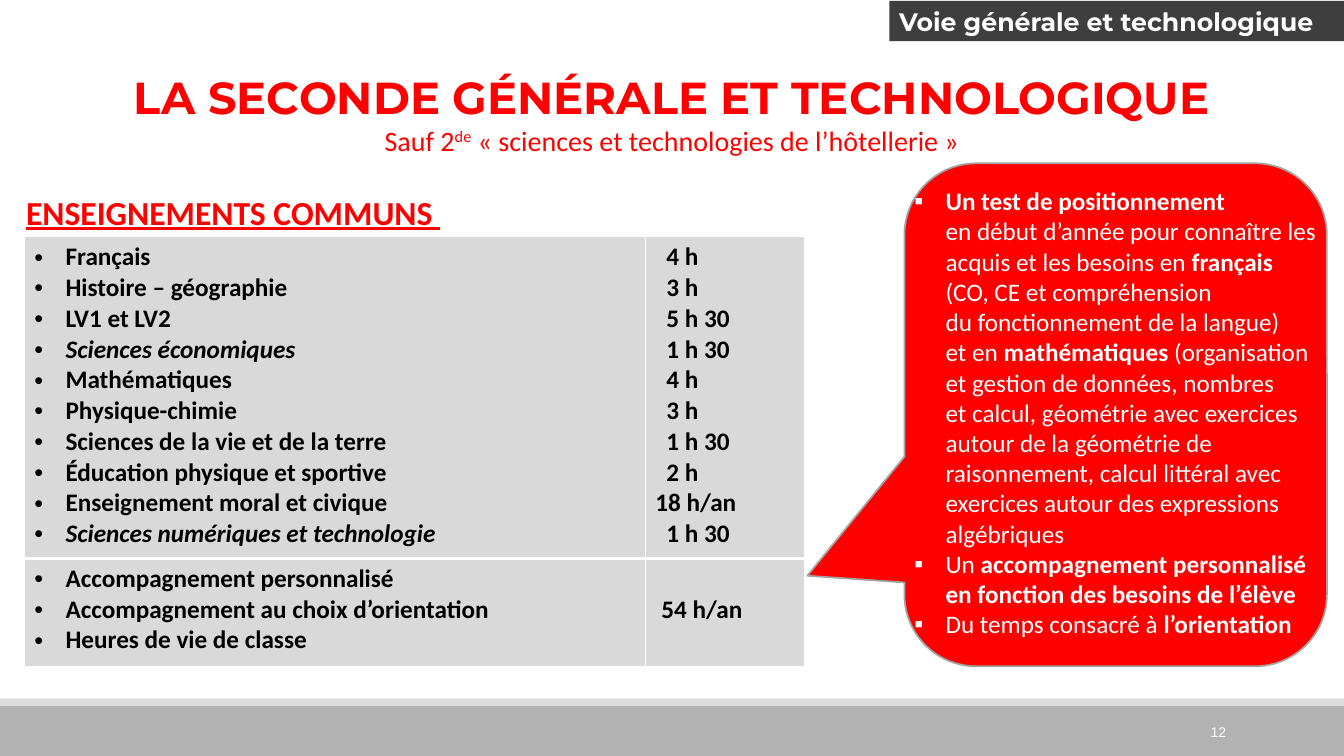
import pptx
import pptx.util
import pptx.dml.color
import pptx.enum.shapes
import pptx.enum.text
import pptx.oxml
import pptx.oxml.ns
from dataclasses import dataclass

Inches = pptx.util.Inches
Pt = pptx.util.Pt
RGB = pptx.dml.color.RGBColor.from_string
Shape = pptx.enum.shapes.MSO_SHAPE
Align = pptx.enum.text.PP_ALIGN
Anchor = pptx.enum.text.MSO_ANCHOR


@dataclass
class Theme:
    red: str = "FF0000"
    white: str = "FFFFFF"
    black: str = "000000"
    tag: str = "3E3E3E"
    cell: str = "D9D9D9"
    footer: str = "B2B2B2"
    stripe: str = "DDDDDD"
    outline: str = "A3A3A3"
    title: int = 32
    heading: int = 24
    subtitle: int = 20
    body: int = 18
    number: int = 10


theme = Theme()


def add_span(para, text, size=theme.body, color=theme.black, font="Calibri",
             bold=False, italic=False, underline=False, raised=False):
    for index, line in enumerate(text.split("\n")):
        if index:
            para.add_line_break()
        if not line:
            continue
        span = para.add_run()
        span.text = line
        span.font.size = Pt(size)
        span.font.color.rgb = RGB(color)
        span.font.name = font
        span.font.bold = bold
        span.font.italic = italic
        span.font.underline = underline
        if raised:
            span.font._element.set("baseline", "30000")


def set_indent(para, left, bullet=None):
    props = para._p.get_or_add_pPr()
    props.set("marL", str(Inches(left)))
    props.set("indent", str(-Inches(left) if bullet else 0))
    if bullet:
        for tag, name, value in (("buFont", "typeface", "Arial"), ("buChar", "char", bullet)):
            mark = pptx.oxml.parse_xml(f'<a:{tag} {pptx.oxml.ns.nsdecls("a")} {name}="{value}"/>')
            props.append(mark)


deck = pptx.Presentation()
deck.slide_width = Inches(13.33)
deck.slide_height = Inches(7.5)
page = deck.slides.add_slide(deck.slide_layouts[6])

# Footer bands, callout and section tag
blocks = {}
for name, kind, place, fill in (
    ("footer", Shape.RECTANGLE, (0, 7, 13.33, 0.5), theme.footer),
    ("stripe", Shape.RECTANGLE, (0, 6.93, 13.33, 0.07), theme.stripe),
    ("callout", Shape.ROUNDED_RECTANGULAR_CALLOUT, (8.97, 1.62, 4.19, 4.99), theme.red),
    ("tag", Shape.RECTANGLE, (8.82, 0.01, 4.51, 0.4), theme.tag),
):
    block = page.shapes.add_shape(kind, *map(Inches, place))
    block.shadow.inherit = False
    block.fill.solid()
    block.fill.fore_color.rgb = RGB(fill)
    block.line.fill.background()
    blocks[name] = block

callout = blocks["callout"]
for index, value in enumerate((-0.73, 0.32, 0.17)):
    callout.adjustments[index] = value
callout.line.color.rgb = RGB(theme.outline)
callout.line.width = Pt(1.25)

tag_frame = blocks["tag"].text_frame
tag_frame.word_wrap = False
tag_frame.vertical_anchor = Anchor.TOP
tag_frame.paragraphs[0].alignment = Align.LEFT
add_span(tag_frame.paragraphs[0], "Voie générale et technologique",
         color=theme.white, font="Montserrat", bold=True)

# Text boxes
frames = {}
for name, place, wrap in (
    ("advice", (8.97, 1.79, 4.19, 4.64), True),
    ("title", (0.85, 0.64, 11.63, 0.98), False),
    ("heading", (0.16, 1.85, 4.35, 0.5), False),
    ("number", (10.83, 7.06, 1.43, 0.4), True),
):
    frames[name] = page.shapes.add_textbox(*map(Inches, place)).text_frame
    frames[name].word_wrap = wrap

# Title and subtitle
title = frames["title"].paragraphs[0]
subtitle = frames["title"].add_paragraph()
title.alignment = subtitle.alignment = Align.CENTER
add_span(title, "LA SECONDE GÉNÉRALE ET TECHNOLOGIQUE", size=theme.title,
         color=theme.red, font="Montserrat", bold=True)
for text, raised in (("Sauf 2", False), ("de", True),
                     (" « sciences et technologies de l’hôtellerie »", False)):
    add_span(subtitle, text, size=theme.subtitle, color=theme.red, raised=raised)

# Heading and page number
add_span(frames["heading"].paragraphs[0], "ENSEIGNEMENTS COMMUNS ", size=theme.heading,
         color=theme.red, bold=True, underline=True)
frames["number"].vertical_anchor = Anchor.MIDDLE
number = frames["number"].paragraphs[0]
number.alignment = Align.RIGHT
add_span(number, "12", size=theme.number, color=theme.white, font="Arial")

# Callout text: (text, bold) spans for each bullet
advice = [
    [("Un test de positionnement \n", True),
     ("en début d’année pour connaître les acquis et les besoins en ", False),
     ("français", True),
     (" (CO, CE et compréhension \ndu fonctionnement de la langue) \net en ", False),
     ("mathématiques", True),
     (" (organisation et gestion de données, nombres \net calcul, géométrie avec exercices "
      "autour de la géométrie de raisonnement, calcul littéral avec exercices autour des "
      "expressions algébriques", False)],
    [("Un ", False), ("accompagnement personnalisé en fonction des besoins de l’élève", True)],
    [("Du temps consacré à ", False), ("l’orientation", True)],
]
for index, spans in enumerate(advice):
    para = frames["advice"].add_paragraph() if index else frames["advice"].paragraphs[0]
    set_indent(para, 0.31, "▪")
    for text, bold in spans:
        add_span(para, text, color=theme.white, bold=bold)

# Table of lessons: (subject, hours, italic)
lessons = [
    ("Français", "4 h", False),
    ("Histoire – géographie", "3 h", False),
    ("LV1 et LV2", "5 h 30", False),
    ("Sciences économiques", "1 h 30", True),
    ("Mathématiques", "4 h", False),
    ("Physique-chimie", "3 h", False),
    ("Sciences de la vie et de la terre", "1 h 30", False),
    ("Éducation physique et sportive", "2 h", False),
    ("Enseignement moral et civique", "18 h/an", False),
    ("Sciences numériques et technologie", "1 h 30", True),
]
support = ["Accompagnement personnalisé", "Accompagnement au choix d’orientation",
           "Heures de vie de classe"]
# Each line: text, left indent, bullet, italic
cells = [
    [[(subject, 0.31, "•", italic) for subject, hours, italic in lessons],
     [(hours, 0 if "an" in hours else 0.11, None, False) for subject, hours, italic in lessons]],
    [[(text, 0.31, "•", False) for text in support],
     [("54 h/an", 0.06, None, False)]],
]
table = page.shapes.add_table(2, 2, Inches(0.24), Inches(2.35), Inches(7.74), Inches(4.26)).table
table.first_row = table.horz_banding = False
for column, width in zip(table.columns, (6.16, 1.58)):
    column.width = Inches(width)
for row, height in zip(table.rows, (3.19, 1.07)):
    row.height = Inches(height)

for r, row in enumerate(cells):
    for c, lines in enumerate(row):
        cell = table.cell(r, c)
        for index, (text, left, bullet, italic) in enumerate(lines):
            para = cell.text_frame.add_paragraph() if index else cell.text_frame.paragraphs[0]
            set_indent(para, left, bullet)
            add_span(para, text, bold=True, italic=italic)
        # White borders, thicker between the two rows
        thick = "B" if r == 0 else "T"
        for side in "LRTB":
            width = Pt(3 if side == thick else 1)
            cell._tc.get_or_add_tcPr().append(pptx.oxml.parse_xml(
                f'<a:ln{side} {pptx.oxml.ns.nsdecls("a")} w="{width}"><a:solidFill>'
                f'<a:srgbClr val="{theme.white}"/></a:solidFill></a:ln{side}>'))
        cell.fill.solid()
        cell.fill.fore_color.rgb = RGB(theme.cell)

support_hours = table.cell(1, 1)
support_hours.vertical_anchor = Anchor.MIDDLE
support_hours.margin_bottom = Inches(0.1)

deck.save("out.pptx")
